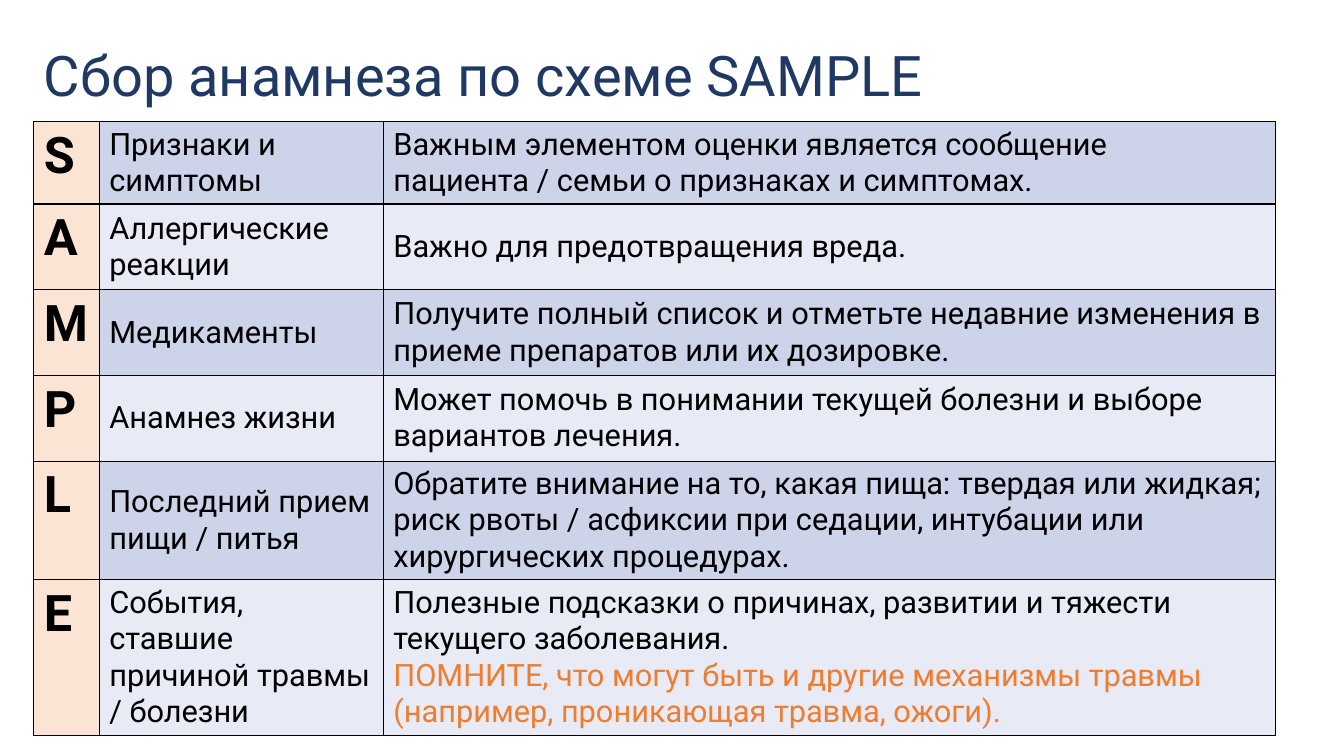
"""Build the slide with the SAMPLE history-taking table."""
import pptx
import pptx.dml.color
import pptx.enum.text
import pptx.oxml
import pptx.oxml.ns
import pptx.util

Cm = pptx.util.Cm
Pt = pptx.util.Pt
RGBColor = pptx.dml.color.RGBColor
MSO_ANCHOR = pptx.enum.text.MSO_ANCHOR

FONT = "Roboto"
NAVY = RGBColor(0x1F, 0x38, 0x64)
BLACK = RGBColor(0x00, 0x00, 0x00)
ORANGE = RGBColor(0xED, 0x7D, 0x31)
PEACH = RGBColor(0xFB, 0xE4, 0xD4)
BANDS = [RGBColor(0xCD, 0xD4, 0xEA), RGBColor(0xE8, 0xEB, 0xF5)]

COL_WIDTHS = [1.65, 7.16, 22.48]
ROW_HEIGHTS = [2.08, 2.16, 2.16, 2.16, 2.98, 3.92]
ROWS = [
    ("S", "Признаки и симптомы",
     ["Важным элементом оценки является сообщение пациента / семьи о признаках и симптомах."]),
    ("А", "Аллергические реакции",
     ["Важно для предотвращения вреда."]),
    ("M", "Медикаменты",
     ["Получите полный список и отметьте недавние изменения в приеме препаратов или их дозировке."]),
    ("P", "Анамнез жизни",
     ["Может помочь в понимании текущей болезни и выборе вариантов лечения."]),
    ("L", "Последний прием пищи / питья",
     ["Обратите внимание на то, какая пища: твердая или жидкая; риск рвоты / асфиксии "
      "при седации, интубации или хирургических процедурах."]),
    ("E", "События, ставшие причиной травмы / болезни",
     ["Полезные подсказки о причинах, развитии и тяжести текущего заболевания.",
      "ПОМНИТЕ, что могут быть и другие механизмы травмы (например, проникающая травма, ожоги)."]),
]


def add_run(p, text, size, color, bold=False):
    r = p.add_run()
    r.text = text
    r.font.name = FONT
    r.font.size = Pt(size)
    r.font.bold = bold
    r.font.color.rgb = color


def add_borders(cell):
    tc_pr = cell._tc.get_or_add_tcPr()
    for side in ("lnL", "lnR", "lnT", "lnB"):
        tc_pr.append(pptx.oxml.parse_xml(
            f'<a:{side} {pptx.oxml.ns.nsdecls("a")} w="{Pt(1)}"><a:solidFill>'
            f'<a:srgbClr val="{BLACK}"/></a:solidFill></a:{side}>'))


prs = pptx.Presentation()
prs.slide_width = Cm(33.87)
prs.slide_height = Cm(19.05)
s = prs.slides.add_slide(prs.slide_layouts[5])

title = s.shapes.title
title.left, title.top, title.width, title.height = Cm(0.85), Cm(0.13), Cm(29.21), Cm(3.68)
tf = title.text_frame
tf.auto_size = pptx.enum.text.MSO_AUTO_SIZE.NONE
tf.vertical_anchor = MSO_ANCHOR.MIDDLE
p = tf.paragraphs[0]
p.alignment = pptx.enum.text.PP_ALIGN.LEFT
p.line_spacing = 0.9
add_run(p, "Сбор анамнеза по схеме SAMPLE", 40, NAVY)

table = s.shapes.add_table(len(ROWS), len(COL_WIDTHS), Cm(0.85), Cm(3.06),
                           Cm(sum(COL_WIDTHS)), Cm(sum(ROW_HEIGHTS))).table
table.first_row = False
table.horz_banding = False
for column, width in zip(table.columns, COL_WIDTHS):
    column.width = Cm(width)

for i, (letter, topic, notes) in enumerate(ROWS):
    table.rows[i].height = Cm(ROW_HEIGHTS[i])
    for j, lines in enumerate([[letter], [topic], notes]):
        cell = table.cell(i, j)
        add_borders(cell)
        cell.fill.solid()
        cell.fill.fore_color.rgb = BANDS[i % 2] if j else PEACH
        cell.vertical_anchor = MSO_ANCHOR.MIDDLE if j else MSO_ANCHOR.TOP
        tf = cell.text_frame
        for k, line in enumerate(lines):
            p = tf.add_paragraph() if k else tf.paragraphs[0]
            add_run(p, line, 22 if j else 36, ORANGE if k else BLACK, bold=j == 0)

prs.save("out.pptx")
